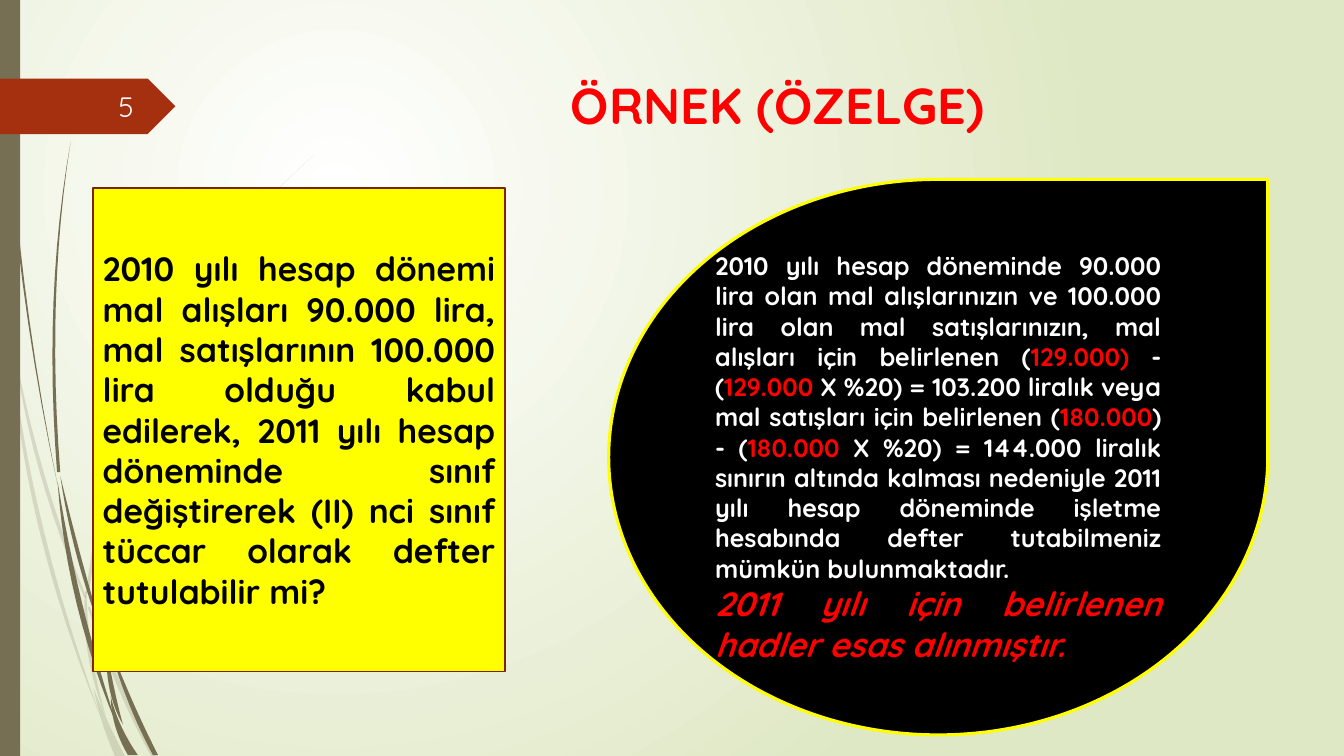
"""Builds the worked-example slide with a question card and an answer drop."""
from dataclasses import dataclass
from typing import Any, NamedTuple, Optional

from lxml import etree
from pptx import Presentation
from pptx.dml import color as dml
from pptx.enum import shapes, text
from pptx.oxml import ns
from pptx import util as u


@dataclass(frozen=True)
class Theme:
    """Colours, font and type sizes."""
    font: str = "Quicksand"
    pale: str = "DFE8C4"
    white: str = "FFFFFF"
    cream: str = "FEFFFF"
    black: str = "000000"
    red: str = "FF0000"
    yellow: str = "FFFF00"
    olive: str = "766F54"
    rust: str = "A53010"
    brown: str = "7A240C"
    head: int = 36
    large: int = 24
    page: int = 20
    body: int = 18


class Knot(NamedTuple):
    """A point on a blade's spine and the blade's width there, in centimetres."""
    x: float
    y: float
    wide: float


class Blade(NamedTuple):
    """A blade of grass whose spine curves through three knots."""
    start: Knot
    mid: Knot
    end: Knot


class Run(NamedTuple):
    """A piece of text in one colour."""
    words: str
    tint: str


@dataclass(frozen=True)
class Para:
    """A paragraph in one type size."""
    runs: list[Run]
    size: int
    align: Any
    bold: bool = True
    slant: bool = False


@dataclass(frozen=True)
class Card:
    """A box in centimetres, with or without a preset outline."""
    box: tuple[float, float, float, float]
    paras: list[Para]
    kind: Any = None
    fill: str = ""
    edge: str = ""
    width: float = 0
    anchor: Any = text.MSO_ANCHOR.MIDDLE


T = Theme()
KIND = shapes.MSO_SHAPE
ALIGN = text.PP_ALIGN
STEPS = 12

HAZE = [
    Blade(Knot(0.05, 7.37, 0.1), Knot(0.15, 8.1, 0.08), Knot(0.28, 8.89, 0)),
    Blade(Knot(0.36, 8.76, 0), Knot(1.04, 11.86, 0.1), Knot(2.15, 15.06, 0.05)),
    Blade(Knot(2.24, 15.3, 0.05), Knot(3, 17.25, 0.12), Knot(3.87, 19.05, 0.13)),
    Blade(Knot(0.28, 8.89, 0), Knot(1.07, 13.46, 0.11), Knot(2.55, 18.1, 0)),
    Blade(Knot(2.16, 14.9, 0.04), Knot(2.27, 16.5, 0.1), Knot(2.67, 18.06, 0)),
    Blade(Knot(2.2, 14.95, 0.08), Knot(4.04, 8.85, 0.05), Knot(7.92, 3.89, 0)),
    Blade(Knot(2.36, 17.35, 0), Knot(2.65, 18.2, 0.15), Knot(3.02, 19.05, 0.25)),
]
GRASS = [
    Blade(Knot(0.09, 0, 0.03), Knot(0.47, 6.1, 0.05), Knot(1.45, 12.22, 0)),
    Blade(Knot(1.52, 11.99, 0), Knot(2.01, 14.1, 0.1), Knot(2.69, 16.3, 0)),
    Blade(Knot(2.8, 16.4, 0.03), Knot(3.33, 17.78, 0.12), Knot(3.92, 19.03, 0.13)),
    Blade(Knot(1.45, 12.12, 0), Knot(2.01, 15.24, 0.14), Knot(2.97, 18.34, 0)),
    Blade(Knot(1.48, 11.9, 0.08), Knot(1.38, 7.6, 0.06), Knot(1.78, 3.58, 0)),
    Blade(Knot(2.69, 16.38, 0), Knot(2.83, 17.4, 0.12), Knot(3.1, 18.26, 0)),
    Blade(Knot(2.79, 17.55, 0), Knot(2.98, 18.3, 0.15), Knot(3.35, 19.03, 0.25)),
]

ASK = ("2010 yılı hesap dönemi mal alışları 90.000 lira, mal satışlarının 100.000 lira olduğu "
       "kabul edilerek, 2011 yılı hesap döneminde sınıf değiştirerek (II) nci sınıf tüccar "
       "olarak defter tutulabilir mi?")
REPLY = [
    Run("2010 yılı hesap döneminde 90.000 lira olan mal alışlarınızın ve 100.000 lira olan mal "
        "satışlarınızın, mal alışları için belirlenen (", T.white),
    Run("129.000)", T.red),
    Run(" - (", T.white),
    Run("129.000", T.red),
    Run(" X %20) = 103.200 liralık veya mal satışları için belirlenen (", T.white),
    Run("180.000", T.red),
    Run(") - (", T.white),
    Run("180.000", T.red),
    Run(" X %20) = 144.000 liralık sınırın altında kalması nedeniyle 2011 yılı hesap döneminde "
        "işletme hesabında defter tutabilmeniz mümkün bulunmaktadır.", T.white),
]
NOTE = [Run("2011 yılı için belirlenen hadler esas alınmıştır.", T.red)]
CARDS = [
    Card((0, 0, 0.51, 19.05), [], KIND.RECTANGLE, T.olive),
    Card((0, 1.98, 4.42, 1.4), [], KIND.PENTAGON, T.rust),
    Card((7.21, 1.75, 24.77, 2.18), [Para([Run("ÖRNEK (ÖZELGE)", T.red)], T.head, ALIGN.CENTER)],
         anchor=text.MSO_ANCHOR.TOP),
    Card((1.47, 2.18, 2.16, 1.02), [Para([Run("5", T.cream)], T.page, ALIGN.RIGHT, bold=False)]),
    Card((2.34, 4.73, 10.39, 12.19), [Para([Run(ASK, T.black)], T.large, ALIGN.JUSTIFY)],
         KIND.RECTANGLE, T.yellow, T.brown, 1.25),
    Card((15.34, 4.52, 16.61, 14),
         [Para(REPLY, T.body, ALIGN.JUSTIFY), Para(NOTE, T.large, ALIGN.JUSTIFY, slant=True)],
         KIND.TEAR, T.black, T.yellow, 2.25),
]


def apply(item: Any, form: dict[str, Any]) -> None:
    """Set each format value on the item."""
    for name, value in form.items():
        setattr(item, name, value)


def rgb(code: str) -> dml.RGBColor:
    """Turn a hex code into a colour."""
    return dml.RGBColor.from_string(code)


def paint(shape: Any, fill: str, edge: str = "", width: float = 0) -> None:
    """Give a shape a flat fill and an optional edge."""
    shape.shadow.inherit = False
    shape.fill.solid()
    shape.fill.fore_color.rgb = rgb(fill)
    if edge:
        apply(shape.line, {"width": u.Pt(width)})
        shape.line.color.rgb = rgb(edge)
    else:
        shape.line.fill.background()


def along(blade: Blade, t: float) -> Knot:
    """Find the knot at t from 0 to 1 on the parabola through a blade's three knots."""
    first, half, last = (1 - t) * (1 - 2 * t), 4 * t * (1 - t), t * (2 * t - 1)
    return Knot(*(first * a + half * b + last * c for a, b, c in zip(*blade)))


def trace(tree: Any, blade: Blade, alpha: Optional[int]) -> None:
    """Draw a blade down one side and back up the other, see-through if alpha is given."""
    spine = [along(blade, i / STEPS) for i in range(STEPS + 1)]
    left = [(u.Cm(k.x - k.wide / 2), u.Cm(k.y)) for k in spine]
    right = [(u.Cm(k.x + k.wide / 2), u.Cm(k.y)) for k in spine]
    pen = tree.build_freeform(*left[0])
    pen.add_line_segments(left[1:] + right[::-1], close=True)
    shape = pen.convert_to_shape()
    paint(shape, T.olive)
    if alpha is not None:
        tone = shape._element.spPr.find(".//" + ns.qn("a:srgbClr"))
        etree.SubElement(tone, ns.qn("a:alpha"), val=str(alpha * 1000))


def write(frame: Any, card: Card) -> None:
    """Fill a text frame with the paragraphs of a card."""
    apply(frame, {"word_wrap": True, "vertical_anchor": card.anchor})
    for i, para in enumerate(card.paras):
        line = frame.add_paragraph() if i else frame.paragraphs[0]
        line.alignment = para.align
        form = {"name": T.font, "size": u.Pt(para.size), "bold": para.bold, "italic": para.slant}
        for run in para.runs:
            part = line.add_run()
            part.text = run.words
            apply(part.font, form)
            part.font.color.rgb = rgb(run.tint)


def draw(tree: Any, card: Card) -> None:
    """Draw a card as a preset shape or a text box."""
    box = [u.Cm(side) for side in card.box]
    if card.kind is None:
        shape = tree.add_textbox(*box)
    else:
        shape = tree.add_shape(card.kind, *box)
        paint(shape, card.fill, card.edge, card.width)
    write(shape.text_frame, card)


def glow(slide: Any) -> None:
    """Lay a round gradient behind the slide."""
    fill = slide.background.fill
    fill.gradient()
    for stop, tint in zip(fill.gradient_stops, (T.white, T.pale)):
        stop.color.rgb = rgb(tint)
    grad = slide._element.find(".//" + ns.qn("a:gradFill"))
    ring = etree.Element(ns.qn("a:path"), {"path": "circle"})
    etree.SubElement(ring, ns.qn("a:fillToRect"), l="50000", t="50000", r="100000", b="100000")
    grad.replace(grad.find(ns.qn("a:lin")), ring)


def main() -> None:
    """Build and save the slide."""
    deck = Presentation()
    apply(deck, {"slide_width": u.Cm(33.87), "slide_height": u.Cm(19.05)})
    slide = deck.slides.add_slide(deck.slide_layouts[6])
    glow(slide)
    for blades, alpha in ((HAZE, 20), (GRASS, None)):
        group = slide.shapes.add_group_shape()
        for blade in blades:
            trace(group.shapes, blade, alpha)
    for card in CARDS:
        draw(slide.shapes, card)
    deck.save("out.pptx")


if __name__ == "__main__":
    main()
